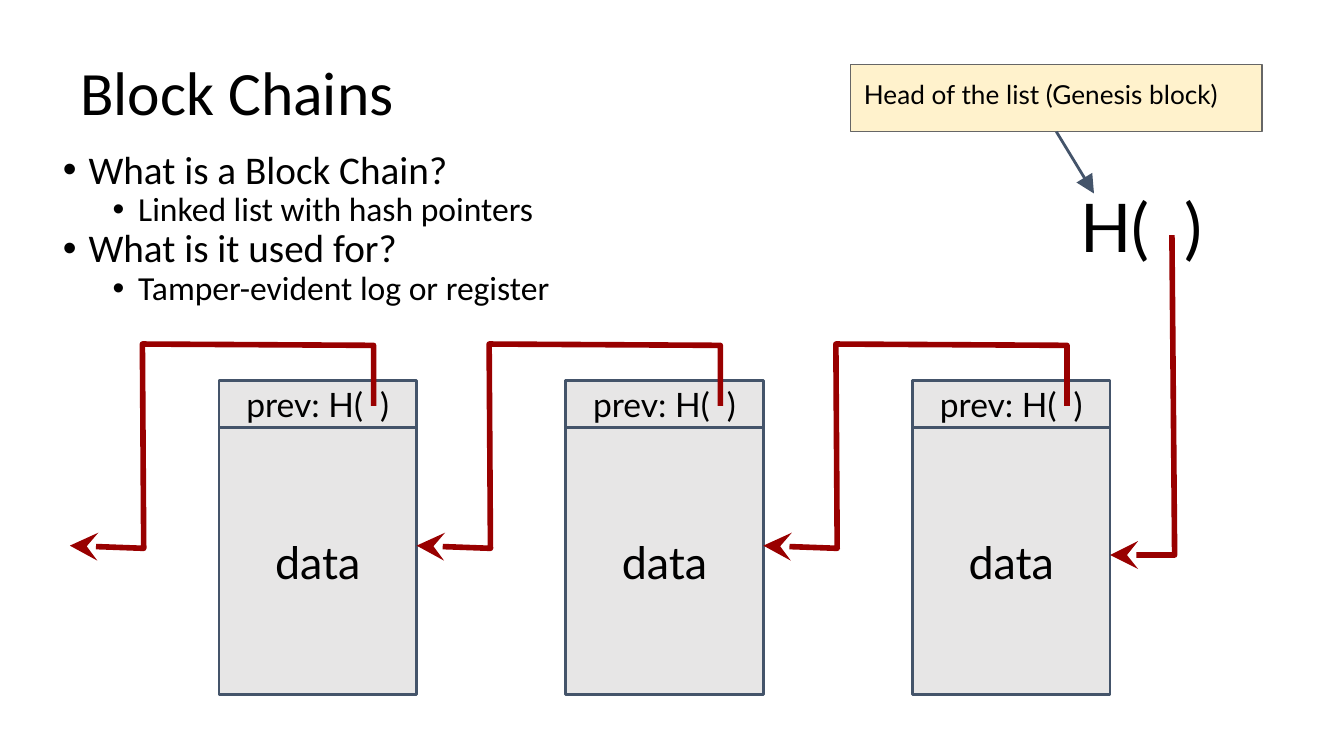
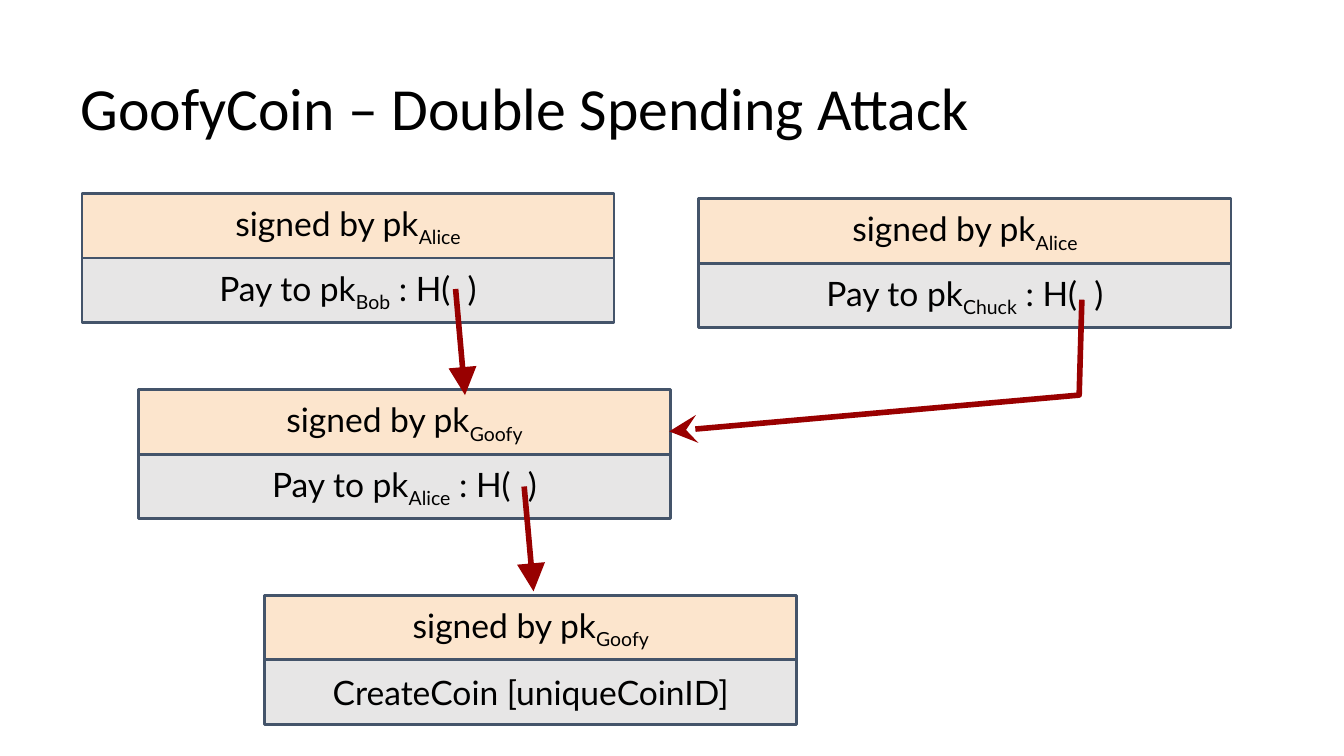
from lxml import etree
from pptx import Presentation
from pptx.dml.color import RGBColor
from pptx.enum.shapes import MSO_CONNECTOR, MSO_SHAPE
from pptx.enum.text import MSO_ANCHOR, PP_ALIGN
from pptx.oxml.ns import qn
from pptx.util import Inches, Pt

# Shared style
BLACK = RGBColor(0x00, 0x00, 0x00)
GRAY = RGBColor(0xE7, 0xE6, 0xE6)
PEACH = RGBColor(0xFC, 0xE5, 0xCD)
CREAM = RGBColor(0xFF, 0xF2, 0xCC)
SLATE = RGBColor(0x44, 0x54, 0x6A)
NOTE_EDGE = RGBColor(0x66, 0x66, 0x66)
POINTER_RED = RGBColor(0x99, 0x00, 0x00)
SPEND_RED = RGBColor(0x98, 0x00, 0x00)
HEADING_FONT, LABEL_FONT = "Calibri", "Lato"
RECT, STRAIGHT = MSO_SHAPE.RECTANGLE, MSO_CONNECTOR.STRAIGHT
LEFT, CENTER = PP_ALIGN.LEFT, PP_ALIGN.CENTER
TOP, MIDDLE, BOTTOM = MSO_ANCHOR.TOP, MSO_ANCHOR.MIDDLE, MSO_ANCHOR.BOTTOM

# Block chain layout
BLOCK_WIDTH, BLOCK_PITCH, FIRST_BLOCK = 1.47, 2.58, 1.63
HEADER_TOP, HEADER_HEIGHT, DATA_HEIGHT = 2.83, 0.35, 1.99
HOOK = [(1.15, 3.02), (1.15, 2.57), (-0.57, 2.56), (-0.56, 4.08), (-1.11, 4.06)]

# Transaction layout
ENTRY_WIDTH, ENTRY_HEIGHT = 3.96, 0.48
TRANSACTIONS = [
    (1.97, 4.43, "Goofy", "CreateCoin [uniqueCoinID]"),
    (1.03, 2.9, "Goofy", "Pay to pk~Alice~ : H(  )"),
    (0.61, 1.44, "Alice", "Pay to pk~Bob~ : H(  )"),
    (5.2, 1.48, "Alice", "Pay to pk~Chuck~ : H(  )"),
]


def write_text(frame, text, size=18, font=LABEL_FONT, align=LEFT, anchor=TOP,
               spacing=None):
    """Write one paragraph per line; text between tildes is subscript."""
    frame.word_wrap = True
    frame.vertical_anchor = anchor
    frame.margin_left = frame.margin_right = Inches(0.1)
    frame.margin_top = frame.margin_bottom = Inches(0.1)
    for number, line in enumerate(text.split("\n")):
        paragraph = frame.add_paragraph() if number else frame.paragraphs[0]
        paragraph.alignment = align
        if spacing:
            paragraph.line_spacing = spacing
        for index, piece in enumerate(line.split("~")):
            run = paragraph.add_run()
            run.text = piece
            run.font.size = Pt(size)
            run.font.name = font
            run.font.color.rgb = BLACK
            if index % 2:
                run.font._element.set("baseline", "-25000")


def add_label(slide, left, top, width, height, text, **style):
    label = slide.shapes.add_textbox(
        Inches(left), Inches(top), Inches(width), Inches(height))
    write_text(label.text_frame, text, **style)
    return label


def add_title(slide, text, height, size):
    add_label(slide, 0.5, 0.23, 9, height, text, size=size,
              font=HEADING_FONT, anchor=BOTTOM, spacing=0.9)


def add_bullets(slide, left, top, width, height, items):
    lines = "\n".join(text for _, text in items)
    outline = add_label(slide, left, top, width, height, lines,
                        font=HEADING_FONT, spacing=0.9)
    for paragraph, (level, _) in zip(outline.text_frame.paragraphs, items):
        paragraph.level = level
        paragraph.runs[0].font.size = Pt(18 if level else 21)
        properties = paragraph._p.get_or_add_pPr()
        properties.set("marL", str(Inches(0.56 if level else 0.19)))
        properties.set("indent", str(Inches(-0.19)))
        etree.SubElement(properties, qn("a:buFont"), typeface="Arial")
        etree.SubElement(properties, qn("a:buChar"), char="•")


def add_box(slide, left, top, width, height, text, fill=GRAY, edge=SLATE,
            edge_width=1.5, align=CENTER, anchor=MIDDLE, size=18):
    box = slide.shapes.add_shape(
        RECT, Inches(left), Inches(top), Inches(width), Inches(height))
    box.shadow.inherit = False
    box.fill.solid()
    box.fill.fore_color.rgb = fill
    box.line.color.rgb = edge
    box.line.width = Pt(edge_width)
    write_text(box.text_frame, text, size=size, align=align, anchor=anchor)


def style_line(line, color, width, head):
    line.color.rgb = color
    line.width = Pt(width)
    etree.SubElement(line._get_or_add_ln(), qn("a:tailEnd"),
                     type=head, w="lg", len="lg")


def add_arrow(slide, start, end, color=SPEND_RED, width=3):
    ends = [Inches(value) for value in (*start, *end)]
    arrow = slide.shapes.add_connector(STRAIGHT, *ends)
    style_line(arrow.line, color, width, "triangle")
    etree.SubElement(arrow._element.spPr, qn("a:effectLst"))


def add_hash_pointer(slide, points):
    corners = [(Inches(x), Inches(y)) for x, y in points]
    builder = slide.shapes.build_freeform(*corners[0])
    builder.add_line_segments(corners[1:], close=False)
    pointer = builder.convert_to_shape()
    pointer.shadow.inherit = False
    pointer.fill.background()
    style_line(pointer.line, POINTER_RED, 3, "stealth")


def add_block(slide, left):
    add_box(slide, left, HEADER_TOP + HEADER_HEIGHT, BLOCK_WIDTH, DATA_HEIGHT,
            "data", size=24)
    add_box(slide, left, HEADER_TOP, BLOCK_WIDTH, HEADER_HEIGHT, "prev: H(  )")


def add_transaction(slide, left, top, signer, action):
    add_box(slide, left, top + ENTRY_HEIGHT, ENTRY_WIDTH, ENTRY_HEIGHT, action)
    add_box(slide, left, top, ENTRY_WIDTH, ENTRY_HEIGHT,
            f"signed by pk~{signer}~", fill=PEACH)


def build_block_chains(slide):
    add_bullets(slide, 0.37, 1.02, 8.45, 1.36, [
        (0, "What is a Block Chain?"),
        (1, "Linked list with hash pointers"),
        (0, "What is it used for?"),
        (1, "Tamper-evident log or register"),
    ])
    # Blocks, then the pointers that join them
    block_lefts = [FIRST_BLOCK + BLOCK_PITCH * i for i in range(3)]
    for left in block_lefts:
        add_block(slide, left)
    for left in block_lefts:
        add_hash_pointer(slide, [(left + x, y) for x, y in HOOK])
    # Head of the list
    add_label(slide, 7.94, 1.28, 1.55, 0.5, "H(  )", size=36)
    add_hash_pointer(slide, [(8.72, 1.75), (8.74, 4.13), (8.26, 4.13)])
    add_title(slide, "Block Chains", height=0.83, size=33)
    add_box(slide, 6.33, 0.48, 3.06, 0.5, "Head of the list (Genesis block)",
            fill=CREAM, edge=NOTE_EDGE, edge_width=0.75, align=LEFT,
            anchor=TOP, size=14)
    add_arrow(slide, (7.86, 0.98), (8.14, 1.44), color=SLATE, width=1.5)


def build_double_spending(slide):
    for transaction in TRANSACTIONS:
        add_transaction(slide, *transaction)
    # Each payment points to the transaction it spends
    add_arrow(slide, (3.9, 3.62), (3.97, 4.4))
    add_arrow(slide, (3.39, 2.15), (3.46, 2.94))
    add_hash_pointer(slide, [(8.05, 2.23), (8.03, 2.94), (4.98, 3.21)])
    add_title(slide, "GoofyCoin – Double Spending Attack", height=0.94, size=32)


def main():
    deck = Presentation()
    # Widescreen, 16:9
    deck.slide_width = Inches(10)
    deck.slide_height = deck.slide_width * 9 // 16
    blank = deck.slide_layouts[6]
    for build in (build_block_chains, build_double_spending):
        build(deck.slides.add_slide(blank))
    deck.save("out.pptx")


if __name__ == "__main__":
    main()
